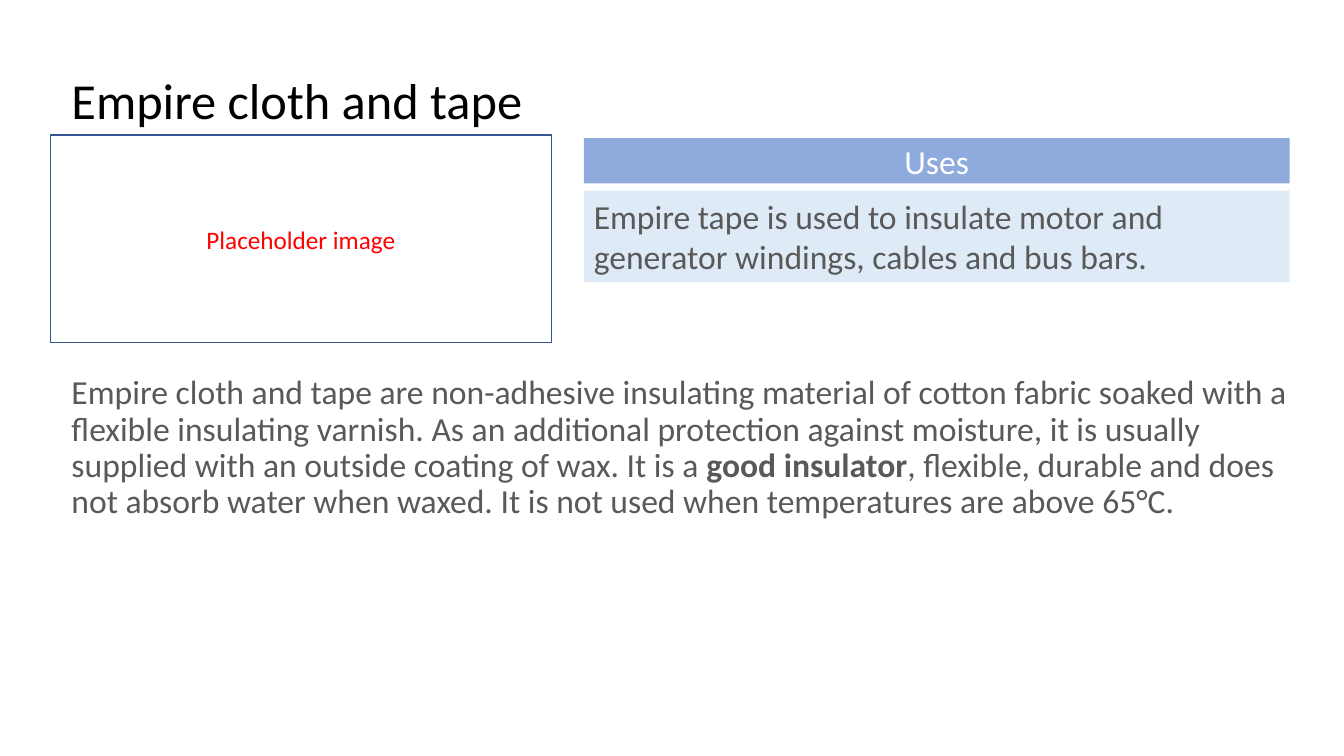
from pptx import Presentation
from pptx.dml.color import RGBColor
from pptx.enum.shapes import MSO_SHAPE
from pptx.enum.text import MSO_ANCHOR, MSO_AUTO_SIZE, PP_ALIGN
from pptx.util import Inches, Pt

RECT = MSO_SHAPE.RECTANGLE
TOP, MID, LOW = MSO_ANCHOR.TOP, MSO_ANCHOR.MIDDLE, MSO_ANCHOR.BOTTOM
LEFT, MIDST = PP_ALIGN.LEFT, PP_ALIGN.CENTER
GROW = MSO_AUTO_SIZE.SHAPE_TO_FIT_TEXT
BLACK = RGBColor(0x00, 0x00, 0x00)
WHITE = RGBColor(0xFF, 0xFF, 0xFF)
GREY = RGBColor(0x59, 0x59, 0x59)
RED = RGBColor(0xFF, 0x00, 0x00)
BLUE = RGBColor(0x8F, 0xAA, 0xDC)
PALE = RGBColor(0xDE, 0xEB, 0xF7)
NAVY = RGBColor(0x32, 0x54, 0x91)

deck = Presentation()
deck.slide_width, deck.slide_height = Inches(13.33), Inches(7.5)
COL, ROW = deck.slide_width / 100, deck.slide_height / 100
slide = deck.slides.add_slide(deck.slide_layouts[6])


def place(x, y, w, h):
    return int(x * COL), int(y * ROW), int(w * COL), int(h * ROW)


def write(shape, parts, size, color, anchor, align=LEFT):
    frame = shape.text_frame
    frame.word_wrap = True
    frame.vertical_anchor = anchor
    para = frame.paragraphs[0]
    para.alignment = align
    for i, part in enumerate(parts):
        run = para.add_run()
        run.text = part
        run.font.name = "Calibri"
        run.font.size = Pt(size)
        run.font.color.rgb = color
        run.font.bold = i % 2 == 1
    return para


title = slide.shapes.add_textbox(*place(4.58, 3.87, 84.7, 14))
write(title, ["Empire cloth and tape"], 36, BLACK, LOW).line_spacing = 0.9

body = slide.shapes.add_textbox(*place(4.58, 49.07, 92.72, 27.73))
para = write(body, [
    "Empire cloth and tape are non-adhesive insulating material of cotton "
    "fabric soaked with a flexible insulating varnish. As an additional "
    "protection against moisture, it is usually supplied with an outside "
    "coating of wax. It is a ",
    "good insulator",
    ", flexible, durable and does not absorb water when waxed. It is not "
    "used when temperatures are above 65°C.",
], 24, GREY, TOP)
para.line_spacing = 0.9
para.space_before = Pt(10)

USE = "Empire tape is used to insulate motor and generator windings, cables and bus bars."
boxes = [
    ((43.44, 18.27, 52.51, 6), BLUE, None, "Uses", 24, WHITE, MID, MIDST),
    ((43.44, 25.2, 52.51, 12.13), PALE, None, USE, 24, GREY, TOP, LEFT),
    ((3.75, 17.87, 37.28, 27.47), None, NAVY, "Placeholder image", 18, RED, MID, MIDST),
]
for spot, fill, line, text, size, color, anchor, align in boxes:
    box = slide.shapes.add_shape(RECT, *place(*spot))
    box.shadow.inherit = False
    if fill:
        box.fill.solid()
        box.fill.fore_color.rgb = fill
        box.line.fill.background()
    else:
        box.fill.background()
        box.line.color.rgb = line
        box.line.width = Pt(1)
    write(box, [text], size, color, anchor, align)
    if text == USE:
        box.text_frame.auto_size = GROW

deck.save("out.pptx")
